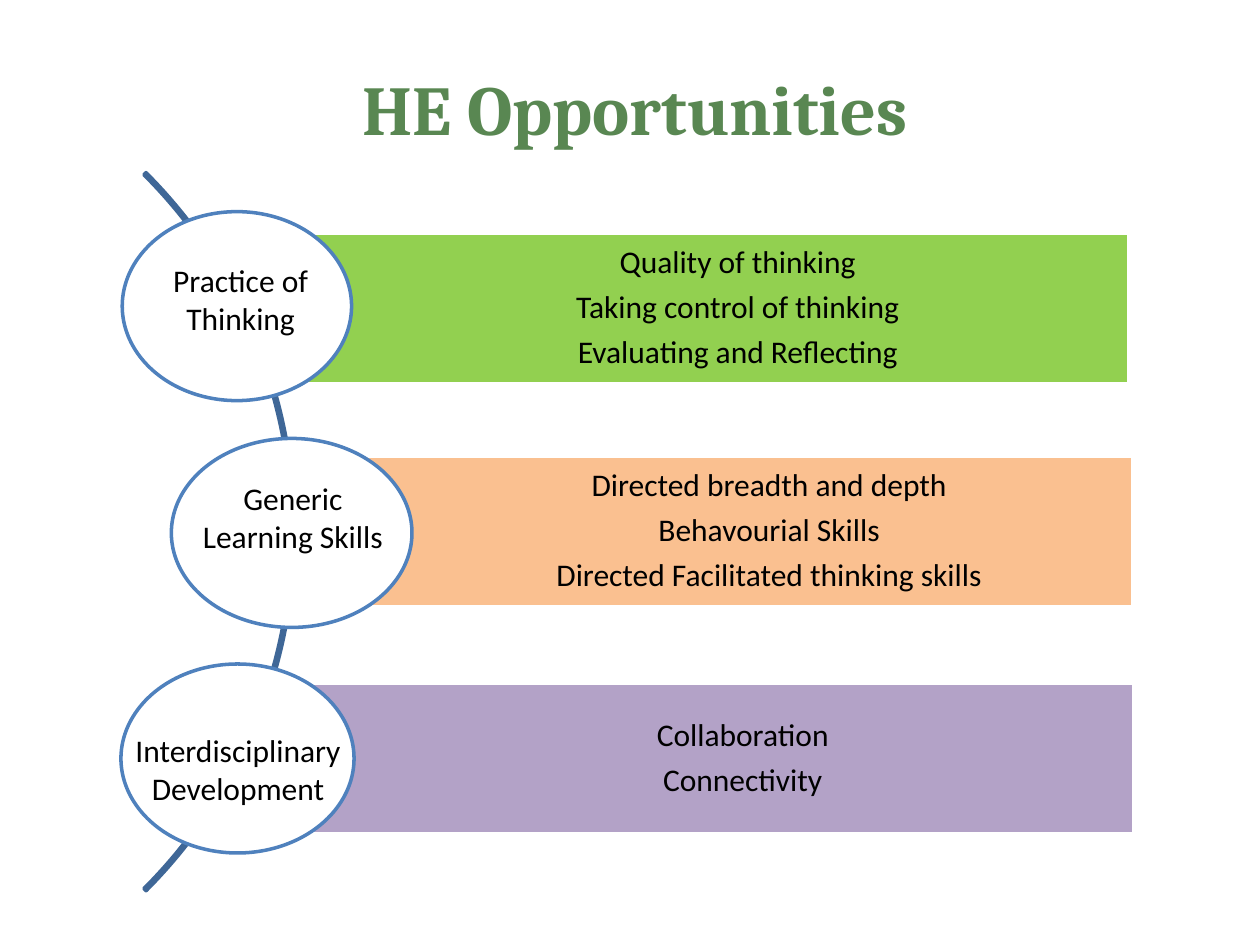
from pptx import Presentation
from pptx import util as u
from pptx.dml.color import RGBColor
from pptx.enum import shapes, text

GREEN = RGBColor(0x59, 0x87, 0x52)
LIME = RGBColor(0x92, 0xD0, 0x50)
PEACH = RGBColor(0xFA, 0xC0, 0x90)
MAUVE = RGBColor(0xB3, 0xA2, 0xC7)
NAVY = RGBColor(0x3F, 0x67, 0x97)
BLUE = RGBColor(0x4F, 0x81, 0xBD)
WHITE = RGBColor(0xFF, 0xFF, 0xFF)
BLACK = RGBColor(0, 0, 0)


class Deck:
    """Holds the style and the current slide."""
    head, body = "Cambria", "Calibri"
    size = u.Pt(18)

    def __init__(self):
        self.prs = Presentation()
        self.prs.slide_width, self.prs.slide_height = u.Inches(10), u.Inches(7.5)
        self.slide = self.prs.slides.add_slide(self.prs.slide_layouts[5])

    def style(self, para, font, size, color, bold=False):
        para.alignment = text.PP_ALIGN.CENTER
        for run in para.runs:
            run.font.name, run.font.size = font, size
            run.font.color.rgb, run.font.bold = color, bold

    def inset(self, frame, left, rest):
        frame.margin_left = u.Inches(left)
        frame.margin_right = frame.margin_top = frame.margin_bottom = u.Inches(rest)

    def title(self, words, box):
        shape = self.slide.shapes.title
        shape.left, shape.top, shape.width, shape.height = map(u.Inches, box)
        frame = shape.text_frame
        frame.text = words
        frame.vertical_anchor = text.MSO_ANCHOR.TOP
        self.inset(frame, 0, 0)
        para = frame.paragraphs[0]
        para.line_spacing = u.Pt(48)
        self.style(para, self.head, u.Pt(40), GREEN, True)

    def shape(self, kind, box, fill, line):
        shape = self.slide.shapes.add_shape(kind, *map(u.Inches, box))
        shape.shadow.inherit = False
        if fill is None:
            shape.fill.background()
        else:
            shape.fill.solid()
            shape.fill.fore_color.rgb = fill
        shape.line.color.rgb, shape.line.width = line, u.Pt(2)
        return shape

    def arc(self, box):
        shape = self.shape(shapes.MSO_SHAPE.BLOCK_ARC, box, None, NAVY)
        for i, value in enumerate((189, 27, 0.003)):
            shape.adjustments[i] = value

    def bar(self, lines, box, fill):
        frame = self.shape(shapes.MSO_SHAPE.RECTANGLE, box, fill, WHITE).text_frame
        frame.text = "\n".join(lines)
        frame.word_wrap = True
        frame.vertical_anchor = text.MSO_ANCHOR.MIDDLE
        self.inset(frame, 0.95, 0.04)
        for para in frame.paragraphs:
            para.line_spacing, para.space_after = 0.9, u.Pt(6.3)
            self.style(para, self.body, self.size, BLACK)

    def oval(self, box):
        self.shape(shapes.MSO_SHAPE.OVAL, box, WHITE, BLUE)

    def label(self, words, box):
        frame = self.slide.shapes.add_textbox(*map(u.Inches, box)).text_frame
        frame.text = words
        frame.word_wrap = True
        self.style(frame.paragraphs[0], self.body, self.size, BLACK)


# Each row: bar lines, bar box, bar fill, oval box, label, label box
ROWS = [
    (["Quality of thinking", "Taking control of thinking",
      "Evaluating and Reflecting"], (1.84, 1.85, 7.12, 1.2), LIME,
     (0.97, 1.68, 1.82, 1.5), "Practice of Thinking", (1.24, 2.02, 1.34, 0.71)),
    (["Directed breadth and depth", "Behavourial Skills",
      "Directed Facilitated thinking skills"], (2.31, 3.62, 6.68, 1.2), PEACH,
     (1.36, 3.48, 1.91, 1.5), "Generic Learning Skills", (1.46, 3.75, 1.73, 1.01)),
    (["Collaboration", "Connectivity"], (1.88, 5.42, 7.12, 1.2), MAUVE,
     (0.96, 5.27, 1.85, 1.5), "Interdisciplinary Development",
     (0.96, 5.75, 1.86, 1.01)),
]


def main():
    deck = Deck()
    deck.title("HE Opportunities", (0.59, 0.52, 8.9, 0.87))

    # Curve that links the ovals
    deck.arc((-5.72, 0.19, 8.06, 8.06))

    # Bars with their ovals and labels
    for lines, bar, fill, oval, words, box in ROWS:
        deck.bar(lines, bar, fill)
        deck.oval(oval)
        deck.label(words, box)

    deck.prs.save("out.pptx")


if __name__ == "__main__":
    main()
